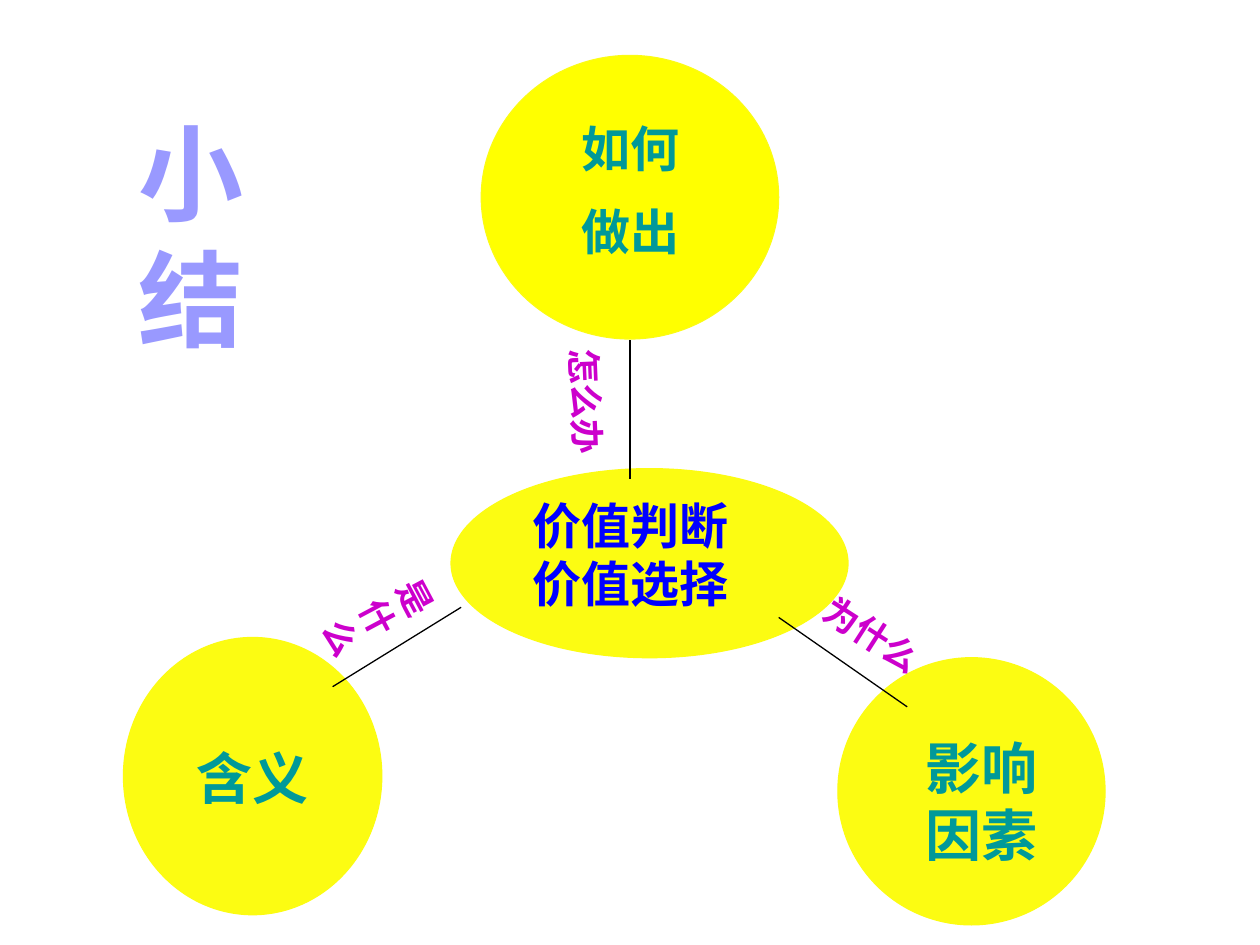
from pptx import Presentation
from pptx.dml.color import RGBColor
from pptx.enum.shapes import MSO_CONNECTOR, MSO_SHAPE
from pptx.enum.text import PP_ALIGN
from pptx.oxml.ns import qn
from pptx.util import Inches, Pt
from lxml.etree import SubElement

deck = Presentation()
deck.slide_width = Inches(10)
deck.slide_height = Inches(7.5)
page = deck.slides.add_slide(deck.slide_layouts[6])
column = deck.slide_width / 100
row = deck.slide_height / 75


def grid(left, top, width, height):
    return [round(left * column), round(top * row), round(width * column), round(height * row)]


def color(value):
    return RGBColor.from_string(value)


ellipses = [
    ((35.8, 37.2, 31.5, 15), "FCFC12"),
    ((9.8, 50.6, 20.5, 22), "FCFC12"),
    ((66.5, 52.2, 21.2, 21.2), "FCFC12"),
    ((38.2, 4.4, 23.6, 22.5), "FFFF00"),
]
for place, fill in ellipses:
    ellipse = page.shapes.add_shape(MSO_SHAPE.OVAL, *grid(*place))
    ellipse.shadow.inherit = False
    ellipse.fill.solid()
    ellipse.fill.fore_color.rgb = color(fill)
    ellipse.line.color.rgb = color("FCFC12")
    ellipse.line.width = Pt(0.75)

spokes = [(36.6, 48.2, 26.4, 54.5), (61.8, 49, 72, 56.1), (50, 38, 50, 27)]
for ends in spokes:
    spoke = page.shapes.add_connector(MSO_CONNECTOR.STRAIGHT, *grid(*ends))
    spoke.line.color.rgb = color("000000")
    spoke.line.width = Pt(0.75)
    SubElement(spoke._element.spPr, qn("a:effectLst"))

arial, noto = "Arial", "Noto Sans CJK SC"
left, center = PP_ALIGN.LEFT, PP_ALIGN.CENTER
labels = [
    (["价值判断", "价值选择"], (41.3, 38.8, 26.8, 15), 0, 28, arial, "0000FF", left, 0),
    (["是什么"], (27.2, 43.5, 5.8, 11), 62, 20, arial, "CC00CC", center, 0),
    (["为什么"], (62.5, 48.2, 13.5, 4.3), 32.8, 20, arial, "CC00CC", center, 0),
    (["怎么办"], (41, 29.7, 11.2, 4.3), 87.6, 20, arial, "CC00CC", center, 0),
    (["含义"], (10.6, 58.5, 18.9, 6.3), 0, 32, arial, "009999", center, 0),
    (["影响因素"], (72, 57.7, 11.8, 11.7), 0, 32, arial, "009999", center, 0),
    (["如何", "做出"], (39.8, 8.9, 20.5, 12.7), 0, 28, noto, "009999", center, 14),
    (["小结"], (6.7, 8.1, 16.9, 22.5), 0, 60, noto, "9999FF", center, 0),
]
for lines, place, angle, size, font, ink, align, gap in labels:
    box = page.shapes.add_textbox(*grid(*place))
    box.rotation = angle
    frame = box.text_frame
    frame.word_wrap = lines != ["小结"]
    for number, line in enumerate(lines):
        para = frame.add_paragraph() if number else frame.paragraphs[0]
        para.alignment = align
        if number:
            para.space_before = Pt(gap)
        span = para.add_run()
        span.text = line
        span.font.name = font
        span.font.size = Pt(size)
        span.font.bold = True
        span.font.color.rgb = color(ink)

deck.save("out.pptx")
